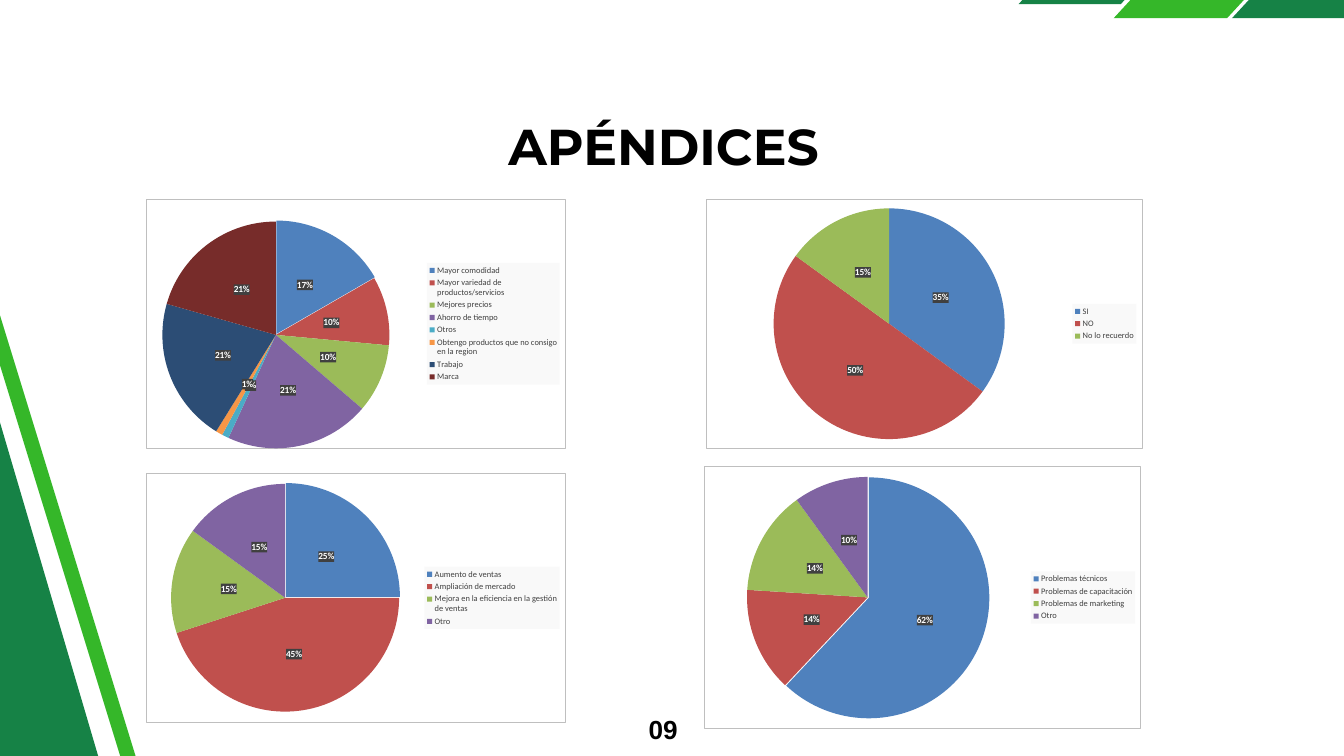
from lxml import etree
from pptx import Presentation
from pptx.chart.data import CategoryChartData
from pptx.dml.color import RGBColor
from pptx.enum.chart import XL_CHART_TYPE, XL_LABEL_POSITION, XL_LEGEND_POSITION
from pptx.enum.text import MSO_ANCHOR, MSO_AUTO_SIZE, PP_ALIGN
from pptx.oxml import parse_xml
from pptx.oxml.ns import nsdecls, qn
from pptx.util import Pt

PIE = XL_CHART_TYPE.PIE
CENTER, RIGHT = PP_ALIGN.CENTER, PP_ALIGN.RIGHT
PX = 9525  # EMU per px, 96 px to the inch

BLACK = RGBColor(0x00, 0x00, 0x00)
WHITE = RGBColor(0xFF, 0xFF, 0xFF)
GRAY = RGBColor(0x40, 0x40, 0x40)
PALE = RGBColor(0xF2, 0xF2, 0xF2)
BORDER = RGBColor(0xBF, 0xBF, 0xBF)
DARK_GREEN = RGBColor(0x16, 0x82, 0x46)
GREEN = RGBColor(0x35, 0xB7, 0x29)
SLICES = [RGBColor.from_string(c) for c in (
    "4F81BD", "C0504D", "9BBB59", "8064A2", "4BACC6", "F79646", "2C4D75", "772C2A")]

TITLE = "APÉNDICES"
PAGE = "09"

# colour, box, slant of the sides, rotation
BANDS = [
    (DARK_GREEN, (1455, -83, 228, 89), 82, 0),
    (GREEN, (1591, -102, 280, 128), 118, 0),
    (DARK_GREEN, (1760, -102, 280, 128), 118, 0),
    (DARK_GREEN, (-969, 598, 1575, 481), 0, 253.6),
    (GREEN, (-680, 825, 1575, 21), 0, 252.9),
]

CHARTS = [
    {"box": (208, 284, 600, 357), "plot": (0.01, 0.09, 0.6, 0.91), "explosion": 1,
     "data": [("Mayor comodidad", 17), ("Mayor variedad de productos/servicios", 10),
              ("Mejores precios", 10), ("Ahorro de tiempo", 21), ("Otros", 1),
              ("Obtengo productos que no consigo en la region", 1),
              ("Trabajo", 21), ("Marca", 21)]},
    {"box": (208, 676, 600, 356), "explosion": 1,
     "data": [("Aumento de ventas", 25), ("Ampliación de mercado", 45),
              ("Mejora en la eficiencia en la gestión de ventas", 15), ("Otro", 15)]},
    {"box": (1006, 666, 624, 375), "explosion": 1,
     "data": [("Problemas técnicos", 62), ("Problemas de capacitación", 14),
              ("Problemas de marketing", 14), ("Otro", 10)]},
    {"box": (1008, 284, 624, 357),
     "data": [("SI", 35), ("NO", 50), ("No lo recuerdo", 15)]},
]


def emu(values):
    return [v * PX for v in values]


def write(sp, text, *, size, font, align, spacing=None):
    tf = sp.text_frame
    tf.word_wrap = True
    tf.auto_size = MSO_AUTO_SIZE.NONE
    tf.vertical_anchor = MSO_ANCHOR.TOP
    tf.margin_left = tf.margin_right = tf.margin_top = tf.margin_bottom = 0
    p = tf.paragraphs[0]
    p.alignment = align
    if spacing:
        p.line_spacing = Pt(spacing)
    r = p.add_run()
    r.text = text
    style(r.font, size, BLACK, font, True)


def style(font, size, color, name="Calibri", bold=False):
    font.size, font.name, font.bold = Pt(size), name, bold
    font.color.rgb = color


def add_band(s, color, box, slant, rotation):
    x, y, w, h = box
    builder = s.shapes.build_freeform(x + slant, y, scale=PX)
    builder.add_line_segments([(x + w, y), (x + w - slant, y + h), (x, y + h)], close=True)
    sp = builder.convert_to_shape()
    sp.rotation = rotation
    sp.shadow.inherit = False
    sp.fill.solid()
    sp.fill.fore_color.rgb = color
    sp.line.fill.background()


def box_format(fill, alpha=100, line=None):
    """Return a c:spPr with a fill, its opacity in percent and an optional outline."""
    outline = (f'<a:ln w="9525"><a:solidFill><a:srgbClr val="{line}"/></a:solidFill></a:ln>'
               if line else "<a:ln><a:noFill/></a:ln>")
    return parse_xml(
        f'<c:spPr {nsdecls("c", "a")}><a:solidFill><a:srgbClr val="{fill}">'
        f'<a:alpha val="{alpha * 1000}"/></a:srgbClr></a:solidFill>{outline}</c:spPr>')


def set_plot_layout(chart, plot):
    area = chart.element.find(".//" + qn("c:plotArea"))
    for old in area.findall(qn("c:layout")):
        area.remove(old)
    layout = etree.Element(qn("c:layout"))
    manual = etree.SubElement(layout, qn("c:manualLayout"))
    values = [("layoutTarget", "inner"), ("xMode", "edge"), ("yMode", "edge"),
              *zip("xywh", plot)]
    for tag, value in values:
        etree.SubElement(manual, qn("c:" + tag)).set("val", str(value))
    area.insert(0, layout)


def add_pie(s, box, data, plot=None, explosion=0):
    chart_data = CategoryChartData()
    chart_data.categories = [name for name, _ in data]
    chart_data.add_series("Series 1", [value for _, value in data])
    chart = s.shapes.add_chart(PIE, *emu(box), chart_data).chart
    chart.has_title = False
    style(chart.font, 10, BLACK)
    chart.element.find(qn("c:chart")).addnext(box_format(WHITE, line=BORDER))
    if plot:
        set_plot_layout(chart, plot)

    chart.has_legend = True
    legend = chart.legend
    legend.position = XL_LEGEND_POSITION.RIGHT
    legend.include_in_layout = False
    style(legend.font, 9, GRAY)
    chart.element.find(".//" + qn("c:legend")).find(qn("c:overlay")).addnext(
        box_format(PALE, alpha=39))

    pie = chart.plots[0]
    pie.vary_by_categories = True
    series = pie.series[0]
    for i, color in enumerate(SLICES[:len(data)]):
        fill = series.points[i].format.fill
        fill.solid()
        fill.fore_color.rgb = color
    ser = chart.element.find(".//" + qn("c:ser"))
    if explosion:
        offset = etree.Element(qn("c:explosion"), val=str(explosion))
        ser.find(qn("c:dPt")).find(qn("c:spPr")).addprevious(offset)

    labels = series.data_labels
    labels.show_percentage = True
    labels.show_value = False
    labels.number_format = "0%"
    labels.number_format_is_linked = False
    labels.position = XL_LABEL_POSITION.CENTER
    style(labels.font, 10, WHITE, bold=True)
    ser.find(qn("c:dLbls")).find(qn("c:numFmt")).addnext(box_format(GRAY))


def main():
    prs = Presentation()
    prs.slide_width, prs.slide_height = emu((1920, 1080))
    s = prs.slides.add_slide(prs.slide_layouts[5])
    for band in BANDS:
        add_band(s, *band)

    title = s.shapes.title
    title.left, title.top, title.width, title.height = emu((280, 164, 1336, 88))
    write(title, TITLE, size=54, font="Montserrat", align=CENTER)
    page = s.shapes.add_textbox(*emu((914, 1012, 54, 48)))
    write(page, PAGE, size=28, font="Arial", align=RIGHT, spacing=39.2)

    for chart in CHARTS:
        add_pie(s, **chart)
    prs.save("out.pptx")


if __name__ == "__main__":
    main()
